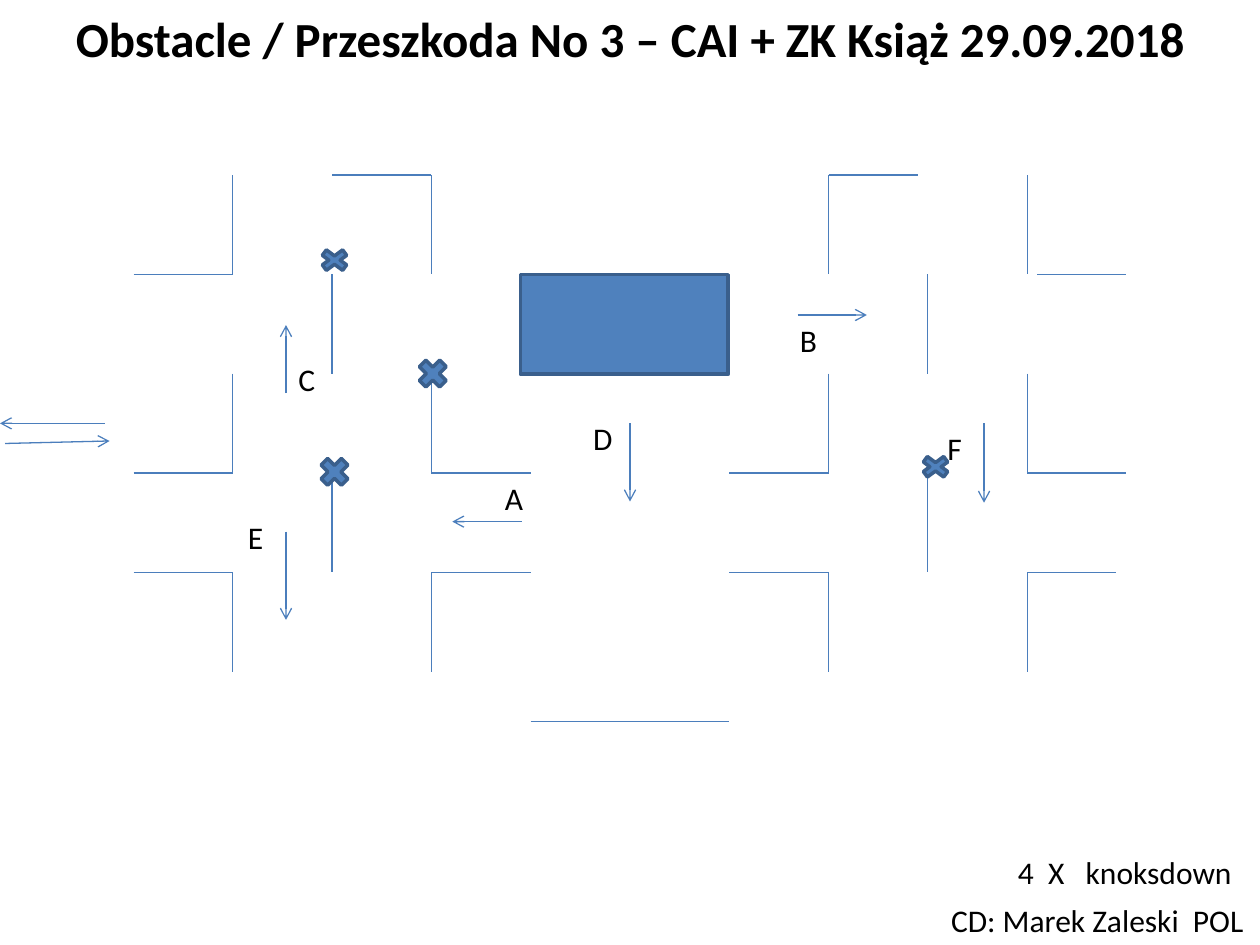
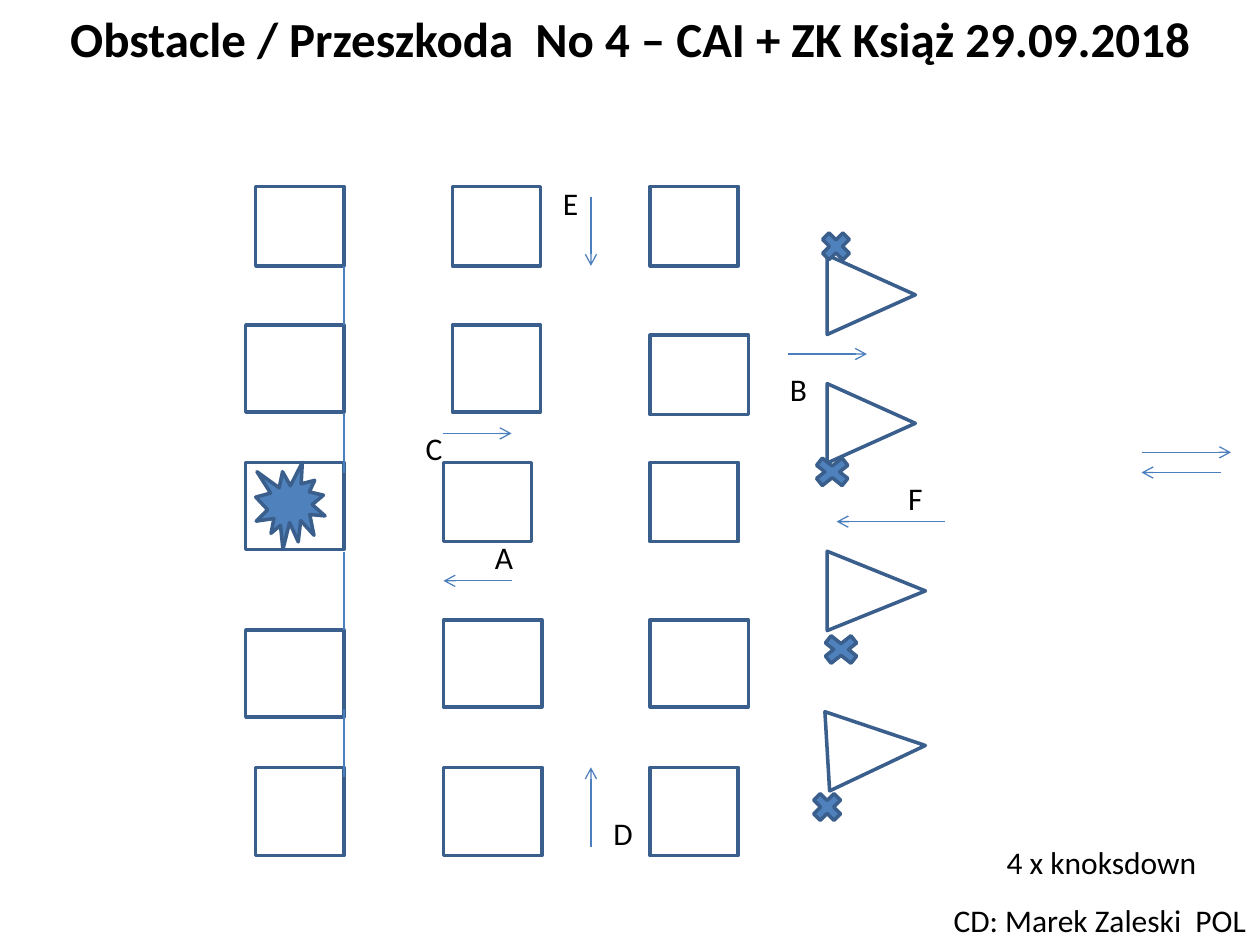
from collections import namedtuple

from lxml.etree import SubElement
from pptx import Presentation
from pptx.dml.color import RGBColor
from pptx.enum.shapes import MSO_CONNECTOR as Connector, MSO_SHAPE as Preset
from pptx.enum.text import MSO_ANCHOR as Anchor, MSO_AUTO_SIZE as AutoSize, PP_ALIGN as Align
from pptx.oxml.ns import qn
from pptx.util import Inches, Pt

FONT = "Calibri"
TEXT, FILL, OUTLINE, LINE = "000000", "4F81BD", "3A5F8C", "4B7EBC"
TITLE_ONLY = 5
DESIGNER = "CD: Marek Zaleski  POL"

Box = namedtuple("Box", "left top width height")
# A gate is an arrow start and run, then its letter and the letter's offset.
Gate = namedtuple("Gate", "x y dx dy letter label_dx label_dy", defaults=("", 0, 0))

TITLE_BOX = Box(0, 0, 10, 0.6)
MAZE_BOX = Box(1.06, 1.39, 7.88, 4.33)
BLOCKS_BOX = Box(1.95, 1.48, 5.4, 5.31)

# Wall ends in grid steps, one row for each group of walls.
MAZE_COLUMNS = 10
MAZE_WALLS = [
    (0, 1, 1, 1), (1, 0, 1, 1), (1, 2, 1, 3), (0, 3, 1, 3), (0, 4, 1, 4), (1, 4, 1, 5),
    (2, 0, 3, 0), (3, 0, 3, 1), (2, 1, 2, 2), (2, 3, 2, 4),
    (3, 2, 3, 3), (3, 3, 4, 3), (3, 4, 4, 4), (3, 4, 3, 5),
    (7, 0, 7.9, 0), (7, 0, 7, 1), (8, 1, 8, 2), (8, 3, 8, 4),
    (7, 2, 7, 3), (6, 3, 7, 3), (6, 4, 7, 4), (7, 4, 7, 5),
    (9, 0, 9, 1), (9.1, 1, 10, 1), (9, 2, 9, 3), (9, 3, 10, 3), (9, 4, 9.9, 4), (9, 4, 9, 5),
    (4, 5.5, 6, 5.5),
]
MAZE_GATES = [
    Gate(-0.23, 1.97, -0.83, 0),
    Gate(-1.02, 2.13, 0.83, -0.02),
    Gate(3.08, 2.75, -0.55, 0, "A", -0.23, -0.39),
    Gate(5.27, 1.11, 0.55, 0, "B", -0.08, 0),
    Gate(1.21, 1.73, 0, -0.54, "C", 0, -0.31),
    Gate(3.94, 1.97, 0, 0.62, "D", -0.39, -0.08),
    Gate(1.21, 2.83, 0, 0.7, "E", -0.4, -0.16),
    Gate(6.75, 1.97, 0, 0.63, "F", -0.39, 0),
]
MAZE_CROSSES = [
    Box(1.44, 0.56, 0.31, 0.23), Box(1.44, 2.2, 0.31, 0.31),
    Box(2.22, 1.42, 0.31, 0.31), Box(6.21, 2.2, 0.31, 0.23),
]

BLOCKS = [
    Box(0.08, 0, 0.7, 0.63), Box(1.64, 0, 0.7, 0.63), Box(3.21, 0, 0.7, 0.63),
    Box(0, 1.1, 0.78, 0.69), Box(1.64, 1.1, 0.7, 0.69), Box(3.21, 1.18, 0.78, 0.63),
    Box(0, 2.19, 0.78, 0.69), Box(1.57, 2.19, 0.7, 0.63), Box(3.21, 2.19, 0.7, 0.63),
    Box(0, 3.52, 0.78, 0.69), Box(1.57, 3.44, 0.78, 0.69), Box(3.21, 3.44, 0.78, 0.69),
    Box(0.08, 4.61, 0.7, 0.7), Box(1.57, 4.61, 0.78, 0.7), Box(3.21, 4.61, 0.7, 0.7),
]
WEDGES = [
    (Box(4.65, 0.51, 0.63, 0.7), 90), (Box(4.65, 1.53, 0.63, 0.7), 90),
    (Box(4.69, 2.82, 0.63, 0.78), 90), (Box(4.69, 4.07, 0.63, 0.78), 86.6),
]
RAIL_X = 0.78
RAILS = [(0.63, 1.1), (1.8, 2.27), (2.9, 3.52), (4.15, 4.69)]
BLOCKS_GATES = [
    Gate(7.11, 2.11, 0.71, 0),
    Gate(7.74, 2.27, -0.63, 0),
    Gate(2.11, 3.13, -0.54, 0, "A", -0.23, -0.39),
    Gate(4.3, 1.33, 0.63, 0, "B", -0.08, 0.08),
    Gate(1.57, 1.96, 0.54, 0, "C", -0.24, -0.08),
    Gate(2.74, 5.24, 0, -0.63, "D", 0.08, -0.31),
    Gate(2.74, 0.08, 0, 0.55, "E", -0.32, -0.15),
    Gate(5.55, 2.66, -0.86, 0, "F", -0.39, -0.39),
]
BLOCKS_CROSSES = [
    Box(4.53, 3.52, 0.39, 0.31), Box(4.46, 4.77, 0.31, 0.31),
    Box(4.46, 2.11, 0.39, 0.31), Box(4.53, 0.32, 0.31, 0.31),
]


def color(hex_code):
    return RGBColor.from_string(hex_code)


def inside(area, part):
    """Shift a part from the area's own coordinates to the slide's."""
    return part._replace(left=area.left + part.left, top=area.top + part.top)


def inches(box):
    return [Inches(length) for length in box]


def write(frame, text, size, bold=False):
    frame.text = text
    font = frame.paragraphs[0].runs[0].font
    font.name, font.size, font.bold = FONT, Pt(size), bold
    font.color.rgb = color(TEXT)


def add_label(slide, text, box):
    frame = slide.shapes.add_textbox(*inches(box)).text_frame
    write(frame, text, 18)
    frame.word_wrap = False
    frame.auto_size = AutoSize.SHAPE_TO_FIT_TEXT


def add_preset(slide, preset, box, fill=None, rotation=0):
    shape = slide.shapes.add_shape(preset, *inches(box))
    shape.shadow.inherit = False
    shape.rotation = rotation
    if fill:
        shape.fill.solid()
        shape.fill.fore_color.rgb = color(fill)
    else:
        shape.fill.background()
    shape.line.color.rgb = color(OUTLINE)
    shape.line.width = Pt(2)


def add_line(slide, area, x1, y1, x2, y2, arrow=False):
    ends = (area.left + x1, area.top + y1, area.left + x2, area.top + y2)
    line = slide.shapes.add_connector(Connector.STRAIGHT, *inches(ends))
    line.line.color.rgb = color(LINE)
    line.line.width = Pt(0.75)
    properties = line._element.spPr
    if arrow:
        SubElement(properties.find(qn("a:ln")), qn("a:tailEnd"), type="arrow")
    SubElement(properties, qn("a:effectLst"))


def add_gates(slide, area, gates):
    for gate in gates:
        add_line(slide, area, gate.x, gate.y, gate.x + gate.dx, gate.y + gate.dy, arrow=True)
        if gate.letter:
            label = Box(gate.x + gate.label_dx, gate.y + gate.label_dy, 0.34, 0.4)
            add_label(slide, gate.letter, inside(area, label))


def add_crosses(slide, area, crosses):
    for cross in crosses:
        add_preset(slide, Preset.MATH_MULTIPLY, inside(area, cross), FILL)


def draw_maze(slide, area):
    step = area.width / MAZE_COLUMNS
    for wall in MAZE_WALLS:
        add_line(slide, area, *(step * end for end in wall))
    add_preset(slide, Preset.RECTANGLE, inside(area, Box(3.07, 0.79, 1.65, 0.79)), FILL)
    add_gates(slide, area, MAZE_GATES)
    add_crosses(slide, area, MAZE_CROSSES)


def draw_blocks(slide, area):
    for block in BLOCKS:
        add_preset(slide, Preset.RECTANGLE, inside(area, block))
    for wedge, rotation in WEDGES:
        add_preset(slide, Preset.ISOSCELES_TRIANGLE, inside(area, wedge), rotation=rotation)
    add_preset(slide, Preset.EXPLOSION1, inside(area, Box(0.08, 2.19, 0.55, 0.69)), FILL)
    for top, bottom in RAILS:
        add_line(slide, area, RAIL_X, top, RAIL_X, bottom)
    add_gates(slide, area, BLOCKS_GATES)
    add_crosses(slide, area, BLOCKS_CROSSES)


def add_obstacle_slide(deck, title_text, knockdowns, knockdowns_box, designer_box):
    """Add a slide with the shared title and the two notes at the bottom right."""
    slide = deck.slides.add_slide(deck.slide_layouts[TITLE_ONLY])
    title = slide.shapes.title
    title.left, title.top, title.width, title.height = inches(TITLE_BOX)
    frame = title.text_frame
    write(frame, title_text, 28, bold=True)
    frame.auto_size = AutoSize.NONE
    frame.vertical_anchor = Anchor.MIDDLE
    frame.paragraphs[0].alignment = Align.CENTER
    add_label(slide, DESIGNER, designer_box)
    add_label(slide, knockdowns, knockdowns_box)
    return slide


def main():
    deck = Presentation()
    deck.slide_width, deck.slide_height = Inches(10), Inches(7.5)
    maze = add_obstacle_slide(
        deck, "Obstacle / Przeszkoda No 3 – CAI + ZK Książ 29.09.2018",
        "4  X   knoksdown", Box(7.98, 6.72, 1.92, 0.4), Box(7.45, 7.1, 2.55, 0.4))
    draw_maze(maze, MAZE_BOX)
    blocks = add_obstacle_slide(
        deck, "Obstacle / Przeszkoda  No 4 – CAI + ZK Książ 29.09.2018",
        "4 x knoksdown", Box(7.89, 6.64, 1.72, 0.4), Box(7.47, 7.1, 2.53, 0.4))
    draw_blocks(blocks, BLOCKS_BOX)
    deck.save("out.pptx")


if __name__ == "__main__":
    main()
